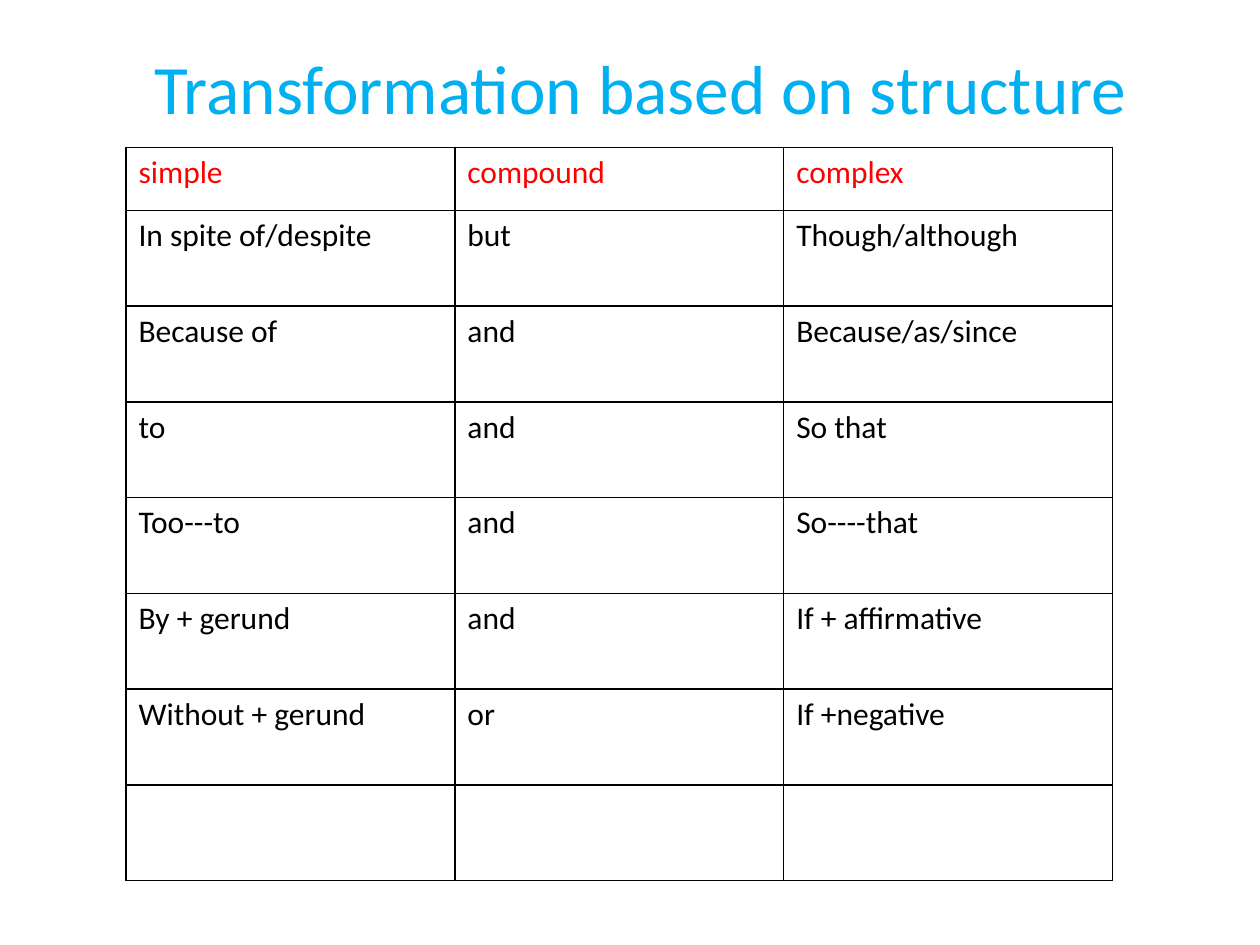
import pptx
import pptx.dml.color
import pptx.enum.text
import pptx.oxml
import pptx.oxml.ns
import pptx.util
from pptx.util import Inches

FONT = "Calibri"
ROWS = [
    ("simple", "compound", "complex"),
    ("In spite of/despite", "but", "Though/although"),
    ("Because of", "and", "Because/as/since"),
    ("to", "and", "So that"),
    ("Too---to", "and", "So----that"),
    ("By + gerund", "and", "If + affirmative"),
    ("Without + gerund", "or", "If +negative"),
    ("", "", ""),
]


def color(hex_value):
    return pptx.dml.color.RGBColor.from_string(hex_value)


def format_runs(text_frame, size, hex_value):
    for paragraph in text_frame.paragraphs:
        for run in paragraph.runs:
            run.font.name = FONT
            run.font.size = pptx.util.Pt(size)
            run.font.color.rgb = color(hex_value)


def set_borders(cell, hex_value, width):
    properties = cell._tc.get_or_add_tcPr()
    # Borders must come before the fill in the cell properties
    for position, side in enumerate(("lnL", "lnR", "lnT", "lnB")):
        line = pptx.oxml.parse_xml(
            f'<a:{side} {pptx.oxml.ns.nsdecls("a")} w="{pptx.util.Pt(width)}">'
            f'<a:solidFill><a:srgbClr val="{hex_value}"/></a:solidFill></a:{side}>'
        )
        properties.insert(position, line)


def add_title(slide, left, top, width, height):
    shape = slide.shapes.add_textbox(left, top, width, height)
    text_frame = shape.text_frame
    text_frame.word_wrap = True
    text_frame.vertical_anchor = pptx.enum.text.MSO_ANCHOR.MIDDLE
    text_frame.text = "Transformation based on structure"
    text_frame.paragraphs[0].alignment = pptx.enum.text.PP_ALIGN.CENTER
    format_runs(text_frame, 39.6, "00B0F0")


def add_structure_table(slide, left, top, width, height):
    header_height = Inches(0.5)
    table = slide.shapes.add_table(
        len(ROWS), len(ROWS[0]), left, top, width, height
    ).table
    table.first_row = False
    table.horz_banding = False

    # Header row is fixed; the other rows share the rest
    body_height = (height - header_height) // (len(ROWS) - 1)
    for index, row in enumerate(table.rows):
        row.height = body_height if index else header_height

    for row_index, texts in enumerate(ROWS):
        for column_index, text in enumerate(texts):
            cell = table.cell(row_index, column_index)
            cell.fill.background()
            set_borders(cell, "000000", 1)
            cell.text_frame.text = text
            format_runs(cell.text_frame, 18, "000000" if row_index else "FF0000")


def main():
    presentation = pptx.Presentation()
    presentation.slide_width = Inches(10)
    presentation.slide_height = Inches(7.5)
    slide = presentation.slides.add_slide(presentation.slide_layouts[6])

    # Heading above the table
    add_title(slide, Inches(0.5), Inches(0.3), Inches(9.17), Inches(0.78))
    add_structure_table(slide, Inches(1), Inches(1.17), Inches(7.83), Inches(5.82))

    presentation.save("out.pptx")


if __name__ == "__main__":
    main()
